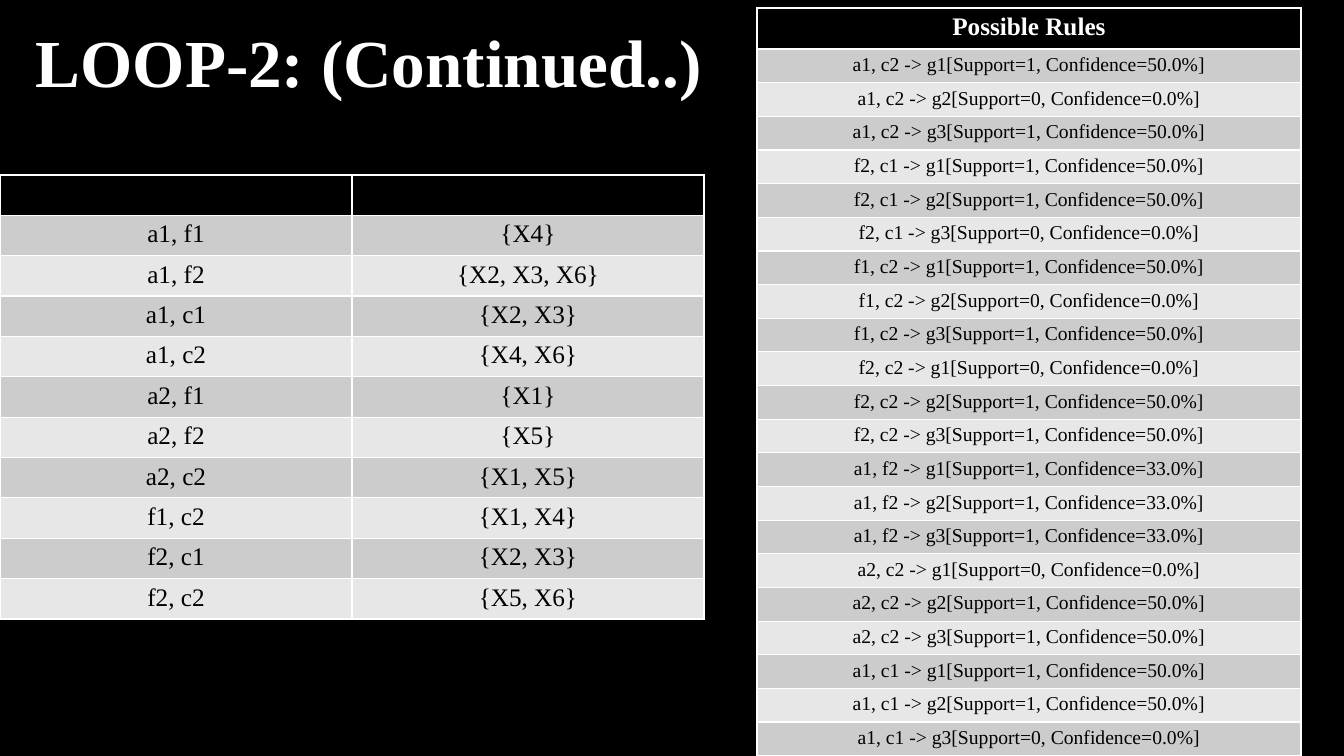
from dataclasses import dataclass

from pptx import Presentation
from pptx.dml.color import RGBColor
from pptx.enum.shapes import MSO_SHAPE
from pptx.enum.text import PP_ALIGN
from pptx.slide import Slide
from pptx.text.text import TextFrame
from pptx.util import Emu, Pt

CENTER = PP_ALIGN.CENTER
JUSTIFY = PP_ALIGN.JUSTIFY
RECTANGLE = MSO_SHAPE.RECTANGLE
BLANK_LAYOUT = 6
SLIDE_WIDTH, SLIDE_HEIGHT = 1344, 756
EMU_PER_PX = 12192000 / SLIDE_WIDTH


@dataclass(frozen=True)
class Theme:
    font: str = "Times New Roman"
    black: str = "000000"
    white: str = "FFFFFF"
    bands: tuple[str, str] = ("CCCCCC", "E7E7E7")
    title_size: int = 48
    table_size: int = 18
    rule_size: int = 14


@dataclass(frozen=True)
class TableSpec:
    left: int
    top: int
    column_width: int
    header_height: int
    row_height: int
    body_size: int
    header: tuple[str, ...]
    body: list[tuple[str, ...]]


@dataclass(frozen=True)
class RuleGroup:
    """Rules from one condition to g1, g2, g3; those with support share a confidence."""
    condition: str
    supports: tuple[int, int, int]
    confidence: float = 50.0

    def rows(self) -> list[tuple[str, ...]]:
        return [
            (f"{self.condition} -> g{number}[Support={support}, "
             f"Confidence={self.confidence if support else 0.0}%]",)
            for number, support in enumerate(self.supports, start=1)
        ]


THEME = Theme()

BLOCKS = [
    ("a1, f1", "{X4}"),
    ("a1, f2", "{X2, X3, X6}"),
    ("a1, c1", "{X2, X3}"),
    ("a1, c2", "{X4, X6}"),
    ("a2, f1", "{X1}"),
    ("a2, f2", "{X5}"),
    ("a2, c2", "{X1, X5}"),
    ("f1, c2", "{X1, X4}"),
    ("f2, c1", "{X2, X3}"),
    ("f2, c2", "{X5, X6}"),
]

RULE_GROUPS = [
    RuleGroup("a1, c2", (1, 0, 1)),
    RuleGroup("f2, c1", (1, 1, 0)),
    RuleGroup("f1, c2", (1, 0, 1)),
    RuleGroup("f2, c2", (0, 1, 1)),
    RuleGroup("a1, f2", (1, 1, 1), confidence=33.0),
    RuleGroup("a2, c2", (0, 1, 1)),
    RuleGroup("a1, c1", (1, 1, 0)),
]

TABLES = [
    TableSpec(left=0, top=175, column_width=352, header_height=40, row_height=40,
              body_size=THEME.table_size, header=("", ""), body=BLOCKS),
    TableSpec(left=757, top=8, column_width=544, header_height=41, row_height=33,
              body_size=THEME.rule_size, header=("Possible Rules",),
              body=[row for group in RULE_GROUPS for row in group.rows()]),
]


def px(length: int) -> Emu:
    return Emu(round(length * EMU_PER_PX))


def write_text(frame: TextFrame, text: str, *, size: int, color: str,
               bold: bool = False, align: PP_ALIGN = CENTER) -> None:
    paragraph = frame.paragraphs[0]
    paragraph.alignment = align
    paragraph.font.size = Pt(size)
    if not text:
        return
    run = paragraph.add_run()
    run.text = text
    run.font.name = THEME.font
    run.font.size = Pt(size)
    run.font.bold = bold
    run.font.color.rgb = RGBColor.from_string(color)


def add_table(slide: Slide, spec: TableSpec) -> None:
    """Add a table whose white grid comes from the default table style."""
    rows = [spec.header, *spec.body]
    columns = len(spec.header)
    height = spec.header_height + spec.row_height * len(spec.body)
    table = slide.shapes.add_table(
        len(rows), columns, px(spec.left), px(spec.top),
        px(spec.column_width * columns), px(height)).table
    for column in table.columns:
        column.width = px(spec.column_width)
    for row_index, values in enumerate(rows):
        is_header = row_index == 0
        table.rows[row_index].height = px(spec.header_height if is_header else spec.row_height)
        fill_color = THEME.black if is_header else THEME.bands[(row_index - 1) % 2]
        for column_index, text in enumerate(values):
            cell = table.cell(row_index, column_index)
            cell.fill.solid()
            cell.fill.fore_color.rgb = RGBColor.from_string(fill_color)
            write_text(cell.text_frame, text, bold=is_header,
                       size=THEME.table_size if is_header else spec.body_size,
                       color=THEME.white if is_header else THEME.black)


def add_backdrop(slide: Slide) -> None:
    shape = slide.shapes.add_shape(RECTANGLE, 0, 0, px(SLIDE_WIDTH), px(SLIDE_HEIGHT))
    shape.shadow.inherit = False
    shape.fill.solid()
    shape.fill.fore_color.rgb = RGBColor.from_string(THEME.black)
    shape.line.fill.background()


def add_title(slide: Slide, text: str) -> None:
    frame = slide.shapes.add_textbox(px(26), px(15), px(881), px(92)).text_frame
    frame.word_wrap = True
    write_text(frame, text, size=THEME.title_size, color=THEME.white,
               bold=True, align=JUSTIFY)


def main() -> None:
    presentation = Presentation()
    presentation.slide_width = px(SLIDE_WIDTH)
    presentation.slide_height = px(SLIDE_HEIGHT)
    slide = presentation.slides.add_slide(presentation.slide_layouts[BLANK_LAYOUT])
    add_backdrop(slide)
    add_title(slide, "LOOP-2: (Continued..)")
    for spec in TABLES:
        add_table(slide, spec)
    presentation.save("out.pptx")


if __name__ == "__main__":
    main()
